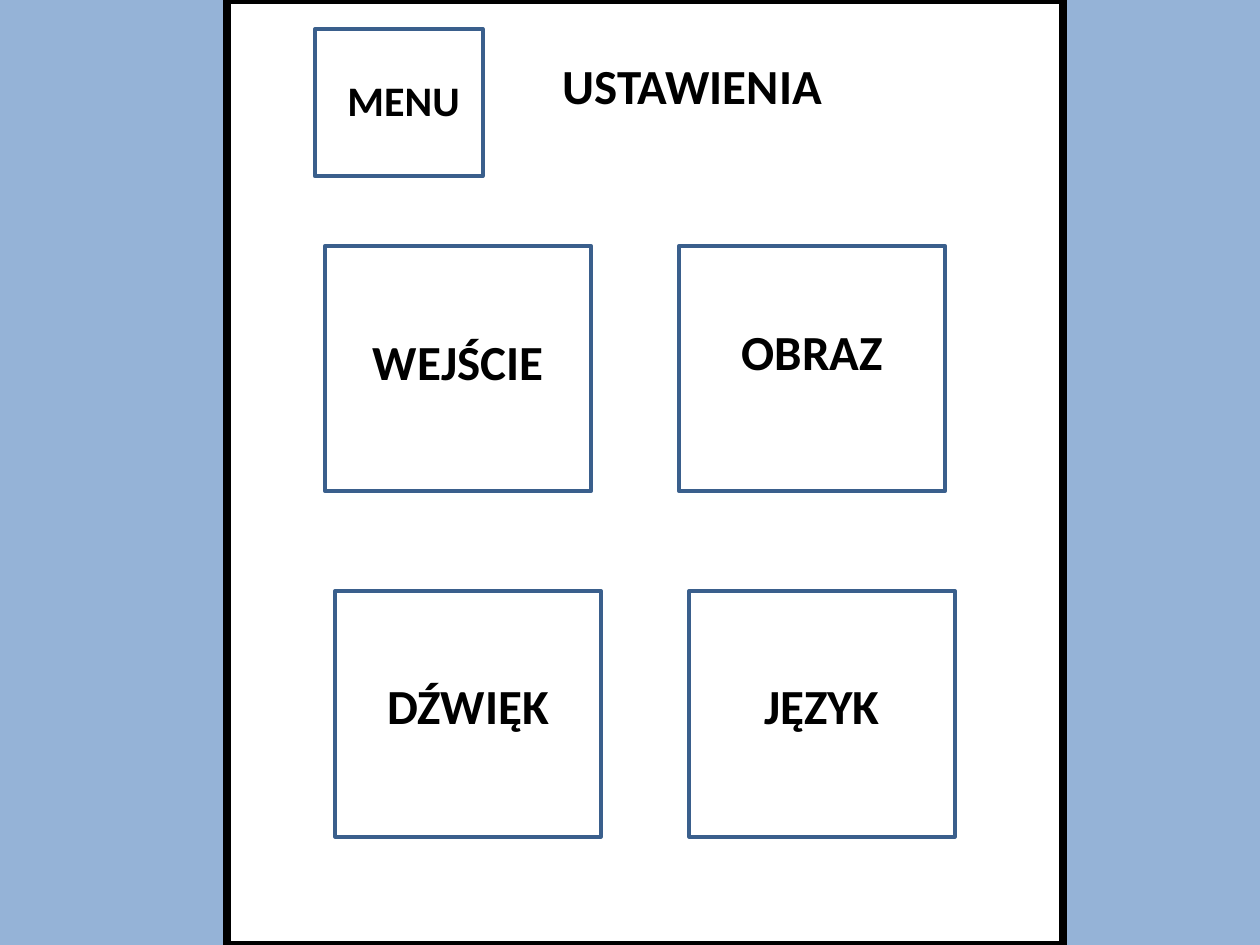
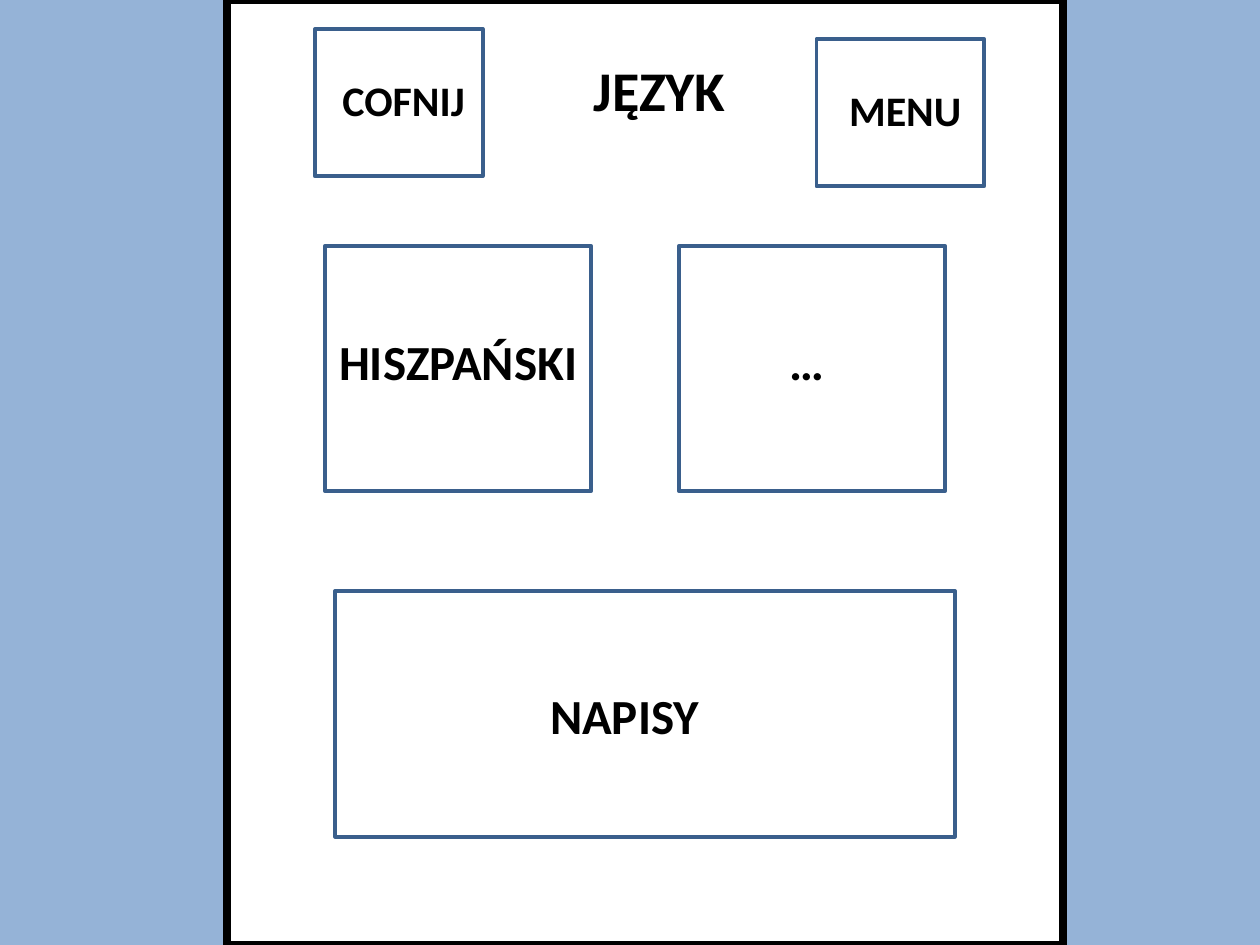
from pptx import Presentation
from pptx.dml.color import RGBColor
from pptx.enum import shapes, text
from pptx.util import Pt

BACKDROP = RGBColor(0x95, 0xB3, 0xD7)
WHITE = RGBColor(0xFF, 0xFF, 0xFF)
BLACK = RGBColor(0, 0, 0)
OUTLINE = RGBColor(0x3A, 0x5F, 0x8C)
FONT = "Calibri"

TILE_W, TILE_H = 151.9, 140.4
COLUMN_STEP = 202.3
UPPER_ROW = (185.8, 140.4)
LOWER_ROW = (191.5, 337.7)
LEFT_BUTTON = (180, 16.6)
RIGHT_BUTTON = (466.6, 22.3)


class Screen:
    """Holds the presentation, the current slide and the shared style."""

    def __init__(self):
        self.prs = Presentation()
        self.prs.slide_width, self.prs.slide_height = Pt(720), Pt(540)
        self.s = None

    def new(self):
        self.s = self.prs.slides.add_slide(self.prs.slide_layouts[6])
        fill = self.s.background.fill
        fill.solid()
        fill.fore_color.rgb = BACKDROP
        panel = self.box(129.6, 0, 478.1, 540, BLACK, 4.5)
        panel.fill.solid()
        panel.fill.fore_color.rgb = WHITE

    def box(self, x, y, w, h, color=OUTLINE, weight=2.25):
        sp = self.s.shapes.add_shape(shapes.MSO_SHAPE.RECTANGLE,
                                     Pt(x), Pt(y), Pt(w), Pt(h))
        sp.shadow.inherit = False
        sp.fill.background()
        sp.line.color.rgb = color
        sp.line.width = Pt(weight)
        return sp

    def label(self, words, x, y, w, size=28, align=text.PP_ALIGN.CENTER):
        height = size * 1.2 + 7.2
        tf = self.s.shapes.add_textbox(Pt(x), Pt(y), Pt(w), Pt(height)).text_frame
        tf.word_wrap = True
        tf.auto_size = text.MSO_AUTO_SIZE.SHAPE_TO_FIT_TEXT
        tf.text = words
        p = tf.paragraphs[0]
        p.alignment = align
        font = p.runs[0].font
        font.name, font.size, font.bold = FONT, Pt(size), True
        font.color.rgb = BLACK

    def button(self, words, corner):
        x, y = corner
        self.box(x, y, 95.8, 84.2)
        self.label(words, x - 5.5, y + 22.7, 112.3, size=24)

    def tile(self, words, row, column, label_box, columns=1):
        """Draw a tile that spans columns; label_box is the text's x, y and width."""
        x, y = row
        self.box(x + column * COLUMN_STEP, y,
                 TILE_W + (columns - 1) * COLUMN_STEP, TILE_H)
        self.label(words, *label_box)


def settings(ui):
    ui.new()
    ui.label("USTAWIENIA", 314.6, 28.1, 163.4, align=text.PP_ALIGN.LEFT)
    ui.button("MENU", LEFT_BUTTON)
    ui.tile("WEJŚCIE", UPPER_ROW, 0, (191.5, 185.8, 140.4))
    ui.tile("OBRAZ", UPPER_ROW, 1, (388.1, 180, TILE_W))
    ui.tile("DŹWIĘK", LOWER_ROW, 0, (191.5, 382.3, TILE_W))
    ui.tile("JĘZYK", LOWER_ROW, 1, (399.6, 382.3, 140.4))


def language(ui):
    ui.new()
    ui.label("JĘZYK", 303.8, 28.1, 146.2, size=32)
    ui.button("COFNIJ", LEFT_BUTTON)
    ui.button("MENU", RIGHT_BUTTON)
    ui.tile("HISZPAŃSKI", UPPER_ROW, 0, (185.8, 185.8, TILE_W))
    ui.tile("…", UPPER_ROW, 1, (388.1, 185.8, 146.2))
    ui.tile("NAPISY", LOWER_ROW, 0, (286.6, 388.1, 140.4), columns=2)


def main():
    ui = Screen()
    settings(ui)
    language(ui)
    ui.prs.save("out.pptx")


if __name__ == "__main__":
    main()
